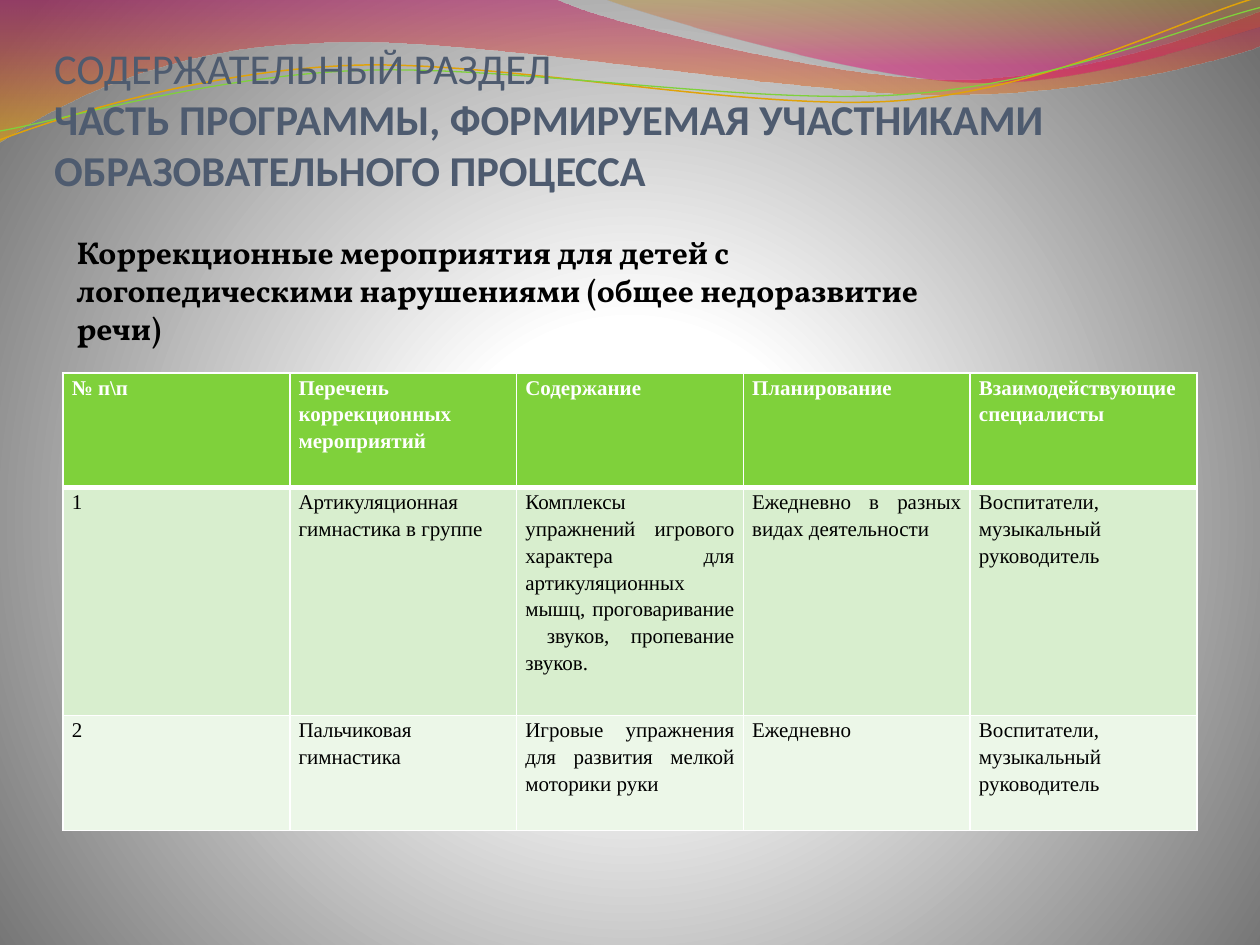
from lxml import etree
from pptx import Presentation
from pptx.dml.color import RGBColor
from pptx.enum.text import MSO_ANCHOR, MSO_AUTO_SIZE, PP_ALIGN
from pptx.oxml import parse_xml
from pptx.oxml.ns import nsdecls, qn
from pptx.util import Inches, Pt

BOTTOM, TOP = MSO_ANCHOR.BOTTOM, MSO_ANCHOR.TOP
NO_AUTOFIT, GROW = MSO_AUTO_SIZE.NONE, MSO_AUTO_SIZE.SHAPE_TO_FIT_TEXT
LEFT, JUSTIFY = PP_ALIGN.LEFT, PP_ALIGN.JUSTIFY

COLORS = {
    "white": "FFFFFF", "gray": "707070", "black": "000000", "title": "4E5B6F",
    "crimson": "BD0059", "amber": "F0AB00", "gold": "C38B00", "pink": "E1006B",
    "orange": "E0A209", "green": "7FD13B", "band_dark": "D8EECE", "band_light": "ECF7E8",
}


def replace_with_gradient(properties, stops, direction):
    stop_xml = "".join(
        f'<a:gs pos="{position * 1000}"><a:srgbClr val="{COLORS[color]}">'
        f'<a:alpha val="{opacity * 1000}"/></a:srgbClr></a:gs>'
        for position, color, opacity in stops
    )
    gradient = parse_xml(
        f'<a:gradFill {nsdecls("a")} rotWithShape="1"><a:gsLst>{stop_xml}</a:gsLst>{direction}</a:gradFill>'
    )
    properties.replace(properties.find(qn("a:solidFill")), gradient)


def add_curve(start, segments, closed):
    builder = slide.shapes.build_freeform(Inches(start[0]), Inches(start[1]))
    anchors = [(Inches(segment[-2]), Inches(segment[-1])) for segment in segments]
    builder.add_line_segments(anchors, close=closed)
    shape = builder.convert_to_shape()
    shape.shadow.inherit = False
    lines = list(shape.element.iter(qn("a:lnTo")))
    for line, segment in zip(lines, segments):
        if len(segment) == 6:
            curve = etree.Element(qn("a:cubicBezTo"))
            for x, y in zip(segment[::2], segment[1::2]):
                etree.SubElement(curve, qn("a:pt"), x=str(Inches(x) - shape.left), y=str(Inches(y) - shape.top))
            line.getparent().replace(line, curve)
    return shape


presentation = Presentation()
presentation.slide_width = Inches(10)
presentation.slide_height = Inches(7.5)
slide = presentation.slides.add_slide(presentation.slide_layouts[5])

slide.background.fill.solid()
replace_with_gradient(
    slide.element.find(".//" + qn("p:bgPr")),
    [(0, "white", 100), (25, "white", 100), (100, "gray", 100)],
    '<a:path path="circle"><a:fillToRect l="10000" t="110000" r="10000" b="100000"/></a:path>',
)

waves = [
    ((0, 0), [(4.4, -0.01), (4.76, 0.17, 6.64, 0.63, 7.58, 0.63),
              (8.53, 0.63, 9.58, 0.26, 10, 0.09), (10.01, 0.36),
              (9.83, 0.44, 8.7, 0.76, 7.46, 0.75), (6.22, 0.75, 3.82, 0.28, 2.57, 0.34),
              (1.29, 0.36, 0.46, 0.83, -0.01, 1.13), (0, 0)],
     [(0, "crimson", 45), (100, "amber", 55)]),
    ((4.79, -0.01), [(5.09, 0.11, 6.82, 0.62, 7.69, 0.65),
                     (8.56, 0.69, 9.61, 0.32, 10, 0.21), (10, 0), (4.79, -0.01)],
     [(0, "gold", 30), (80, "pink", 45)]),
]
for start, segments, stops in waves:
    wave = add_curve(start, segments, True)
    wave.line.fill.background()
    wave.fill.solid()
    replace_with_gradient(wave.element.spPr, stops, '<a:lin ang="5400000" scaled="0"/>')

strands = [
    ((0, 1.11), [(0.48, 0.93, 1.58, 0.57, 2.77, 0.52), (3.95, 0.47, 5.93, 0.89, 7.13, 0.8),
                 (8.33, 0.71, 9.38, 0.15, 9.98, -0.02)], "orange", 0.85),
    ((0, 1.04), [(0.47, 0.96, 1.64, 0.61, 2.83, 0.56), (4.03, 0.51, 5.97, 0.84, 7.17, 0.75),
                 (8.36, 0.67, 9.41, 0.21, 10, 0.06)], "green", 0.75),
]
for start, segments, color, width in strands:
    strand = add_curve(start, segments, False)
    strand.fill.background()
    strand.line.color.rgb = RGBColor.from_string(COLORS[color])
    strand.line.width = Pt(width)

title = slide.shapes.title
title.element.getparent().append(title.element)
title_box = {"left": Inches(0.43), "top": Inches(0.99), "width": Inches(9), "height": Inches(1.31)}
for name, value in title_box.items():
    setattr(title, name, value)
title_frame = {
    "word_wrap": True, "auto_size": NO_AUTOFIT, "vertical_anchor": BOTTOM,
    "margin_left": 0, "margin_top": 0, "margin_right": 0, "margin_bottom": Inches(0.75),
}
for name, value in title_frame.items():
    setattr(title.text_frame, name, value)
paragraph = title.text_frame.paragraphs[0]
paragraph.alignment = LEFT
title_lines = [
    ("СОДЕРЖАТЕЛЬНЫЙ РАЗДЕЛ", False),
    ("ЧАСТЬ ПРОГРАММЫ, ФОРМИРУЕМАЯ УЧАСТНИКАМИ ОБРАЗОВАТЕЛЬНОГО ПРОЦЕССА", True),
]
for index, (text, bold) in enumerate(title_lines):
    if index:
        paragraph.add_line_break()
    run = paragraph.add_run()
    run.text = text
    for name, value in {"name": "Calibri", "size": Pt(24.3), "bold": bold}.items():
        setattr(run.font, name, value)
    run.font.color.rgb = RGBColor.from_string(COLORS["title"])

rows = [
    ["№ п\\п", "Перечень коррекционных мероприятий", "Содержание", "Планирование",
     "Взаимодействующие специалисты"],
    ["1", "Артикуляционная гимнастика в группе",
     "Комплексы упражнений игрового характера для артикуляционных мышц, проговаривание  звуков, пропевание звуков.",
     "Ежедневно в разных видах деятельности", "Воспитатели, музыкальный руководитель"],
    ["2", "Пальчиковая гимнастика", "Игровые упражнения для развития мелкой моторики руки",
     "Ежедневно", "Воспитатели, музыкальный руководитель"],
]
row_formats = [(0.91, "green", "white", True), (1.81, "band_dark", "black", False),
               (0.91, "band_light", "black", False)]
cell_format = {"margin_left": Inches(0.07), "margin_right": Inches(0.07), "margin_top": 0,
               "margin_bottom": 0, "vertical_anchor": TOP}
table = slide.shapes.add_table(
    len(rows), len(rows[0]), Inches(0.5), Inches(2.96), Inches(9), Inches(3.63)
).table
for row_index, (texts, (height, fill, color, bold)) in enumerate(zip(rows, row_formats)):
    table.rows[row_index].height = Inches(height)
    for column_index, text in enumerate(texts):
        cell = table.cell(row_index, column_index)
        for name, value in cell_format.items():
            setattr(cell, name, value)
        paragraph = cell.text_frame.paragraphs[0]
        paragraph.alignment = JUSTIFY
        paragraph.line_spacing = 1.15
        run = paragraph.add_run()
        run.text = text
        for name, value in {"name": "Times New Roman", "size": Pt(12), "bold": bold}.items():
            setattr(run.font, name, value)
        run.font.color.rgb = RGBColor.from_string(COLORS[color])
        cell_properties = cell._tc.get_or_add_tcPr()
        for side in ("lnL", "lnR", "lnT", "lnB"):
            thick = (row_index, side) in ((0, "lnB"), (1, "lnT"))
            border = etree.SubElement(cell_properties, qn(f"a:{side}"), w=str(Pt(3 if thick else 1)))
            border_fill = etree.SubElement(border, qn("a:solidFill"))
            etree.SubElement(border_fill, qn("a:srgbClr"), val=COLORS["white"])
        cell.fill.solid()
        cell.fill.fore_color.rgb = RGBColor.from_string(COLORS[fill])

subtitle = slide.shapes.add_textbox(Inches(0.51), Inches(1.8), Inches(7.56), Inches(1.31))
subtitle.text_frame.word_wrap = True
subtitle.text_frame.auto_size = GROW
run = subtitle.text_frame.paragraphs[0].add_run()
run.text = "Коррекционные мероприятия для детей с логопедическими нарушениями (общее недоразвитие речи)"
for name, value in {"name": "Vollkorn", "size": Pt(18), "bold": True}.items():
    setattr(run.font, name, value)
run.font.color.rgb = RGBColor.from_string(COLORS["black"])

presentation.save("out.pptx")
